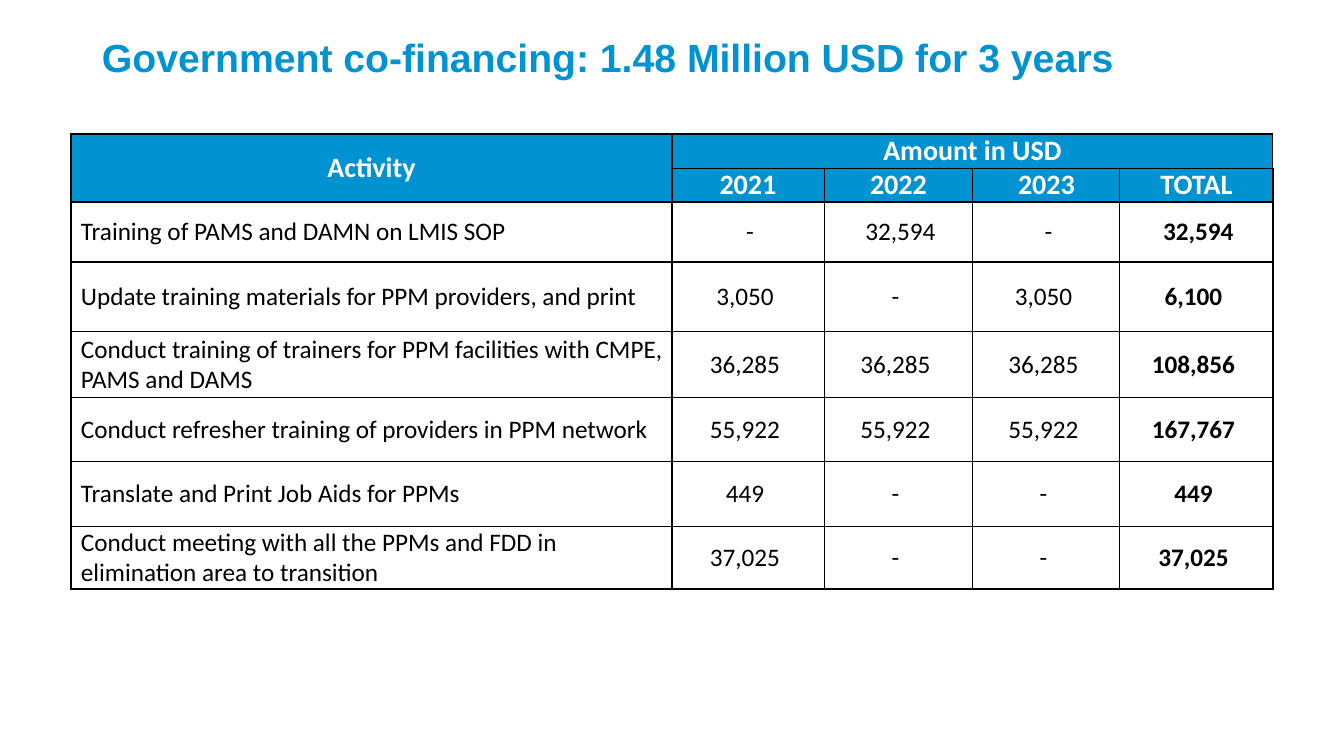
import pptx
import pptx.dml.color
import pptx.enum.text
import pptx.oxml
import pptx.oxml.ns
import pptx.util

PX = 914400 / 100.8
BLUE, WHITE, BLACK = "0092D1", "FFFFFF", "000000"
THICK, THIN = 1.5, 0.75
CENTER = pptx.enum.text.PP_ALIGN.CENTER
LEFT = pptx.enum.text.PP_ALIGN.LEFT
MIDDLE = pptx.enum.text.MSO_ANCHOR.MIDDLE

COLUMNS = [601, 152, 149, 147, 153]
ROWS = [34, 34, 60, 70, 66, 64, 65, 62]
THICK_COLUMN_EDGES = {0, 1, len(COLUMNS)}
THICK_ROW_EDGES = {0, 2, 3, len(ROWS)}
HEADER = [
    ["Activity", "Amount in USD", "", "", ""],
    ["", "2021", "2022", "2023", "TOTAL"],
]
ACTIVITIES = [
    ["Training of PAMS and DAMN on LMIS SOP", "-", "32,594", "-", "32,594"],
    ["Update training materials for PPM providers, and print", "3,050", "-", "3,050", "6,100"],
    ["Conduct training of trainers for PPM facilities with CMPE, PAMS and DAMS",
     "36,285", "36,285", "36,285", "108,856"],
    ["Conduct refresher training of providers in PPM network",
     "55,922", "55,922", "55,922", "167,767"],
    ["Translate and Print Job Aids for PPMs", "449", "-", "-", "449"],
    ["Conduct meeting with all the PPMs and FDD in elimination area to transition",
     "37,025", "-", "-", "37,025"],
]


def px(length):
    """Turn pixels into EMU."""
    return pptx.util.Emu(round(length * PX))


def color(value):
    """Turn a hex string into a colour."""
    return pptx.dml.color.RGBColor.from_string(value)


def style(para, font, size, ink, bold, align):
    """Set the font and alignment of a paragraph."""
    para.alignment = align
    para.font.name = font
    para.font.size = pptx.util.Pt(size)
    para.font.bold = bold
    para.font.color.rgb = color(ink)


def set_margins(target, left=0, right=0):
    """Set side margins and remove those above and below."""
    target.margin_left, target.margin_right = px(left), px(right)
    target.margin_top = target.margin_bottom = 0


def add_title(page, text):
    """Add the slide heading."""
    frame = page.shapes.add_textbox(px(102), px(13), px(1132), px(88)).text_frame
    frame.word_wrap = True
    frame.vertical_anchor = MIDDLE
    set_margins(frame)
    frame.text = text
    style(frame.paragraphs[0], "Arial", 28, BLUE, True, LEFT)


def add_borders(cell, row, column):
    """Draw the four borders of a cell, thick along the main edges."""
    edges = [
        ("L", column in THICK_COLUMN_EDGES),
        ("R", column + 1 in THICK_COLUMN_EDGES),
        ("T", row in THICK_ROW_EDGES),
        ("B", row + 1 in THICK_ROW_EDGES),
    ]
    properties = cell._tc.get_or_add_tcPr()
    for side, thick in edges:
        width = pptx.util.Pt(THICK if thick else THIN)
        properties.append(pptx.oxml.parse_xml(
            f'<a:ln{side} {pptx.oxml.ns.nsdecls("a")} w="{width}"><a:solidFill>'
            f'<a:srgbClr val="{BLACK}"/></a:solidFill></a:ln{side}>'))


def fill_cell(cell, text, row, column):
    """Write and format one table cell."""
    header = row < len(HEADER)
    first, last = column == 0, column == len(COLUMNS) - 1
    add_borders(cell, row, column)
    cell.vertical_anchor = MIDDLE
    cell.text = text
    para = cell.text_frame.paragraphs[0]
    if header:
        cell.fill.solid()
        cell.fill.fore_color.rgb = color(BLUE)
        set_margins(cell)
        style(para, "Calibri", 20, WHITE, True, CENTER)
    else:
        cell.fill.background()
        indented = first or row == len(HEADER)
        set_margins(cell, 10 if indented else 0, 0 if first else 6)
        style(para, "Calibri", 18, BLACK, last, LEFT if first else CENTER)


def add_budget(page):
    """Add the table of activities and yearly amounts."""
    table = page.shapes.add_table(
        len(ROWS), len(COLUMNS), px(71), px(134), px(sum(COLUMNS)), px(sum(ROWS))).table
    table.first_row = table.horz_banding = False
    for column, width in zip(table.columns, COLUMNS):
        column.width = px(width)
    for row, height in zip(table.rows, ROWS):
        row.height = px(height)
    for row, texts in enumerate(HEADER + ACTIVITIES):
        for column, text in enumerate(texts):
            fill_cell(table.cell(row, column), text, row, column)
    table.cell(0, 0).merge(table.cell(1, 0))
    table.cell(0, 1).merge(table.cell(0, 4))


def main():
    """Build the slide and save it."""
    deck = pptx.Presentation()
    deck.slide_width, deck.slide_height = px(1344), px(756)
    page = deck.slides.add_slide(deck.slide_layouts[6])
    add_title(page, "Government co-financing: 1.48 Million USD for 3 years")
    add_budget(page)
    deck.save("out.pptx")


if __name__ == "__main__":
    main()
